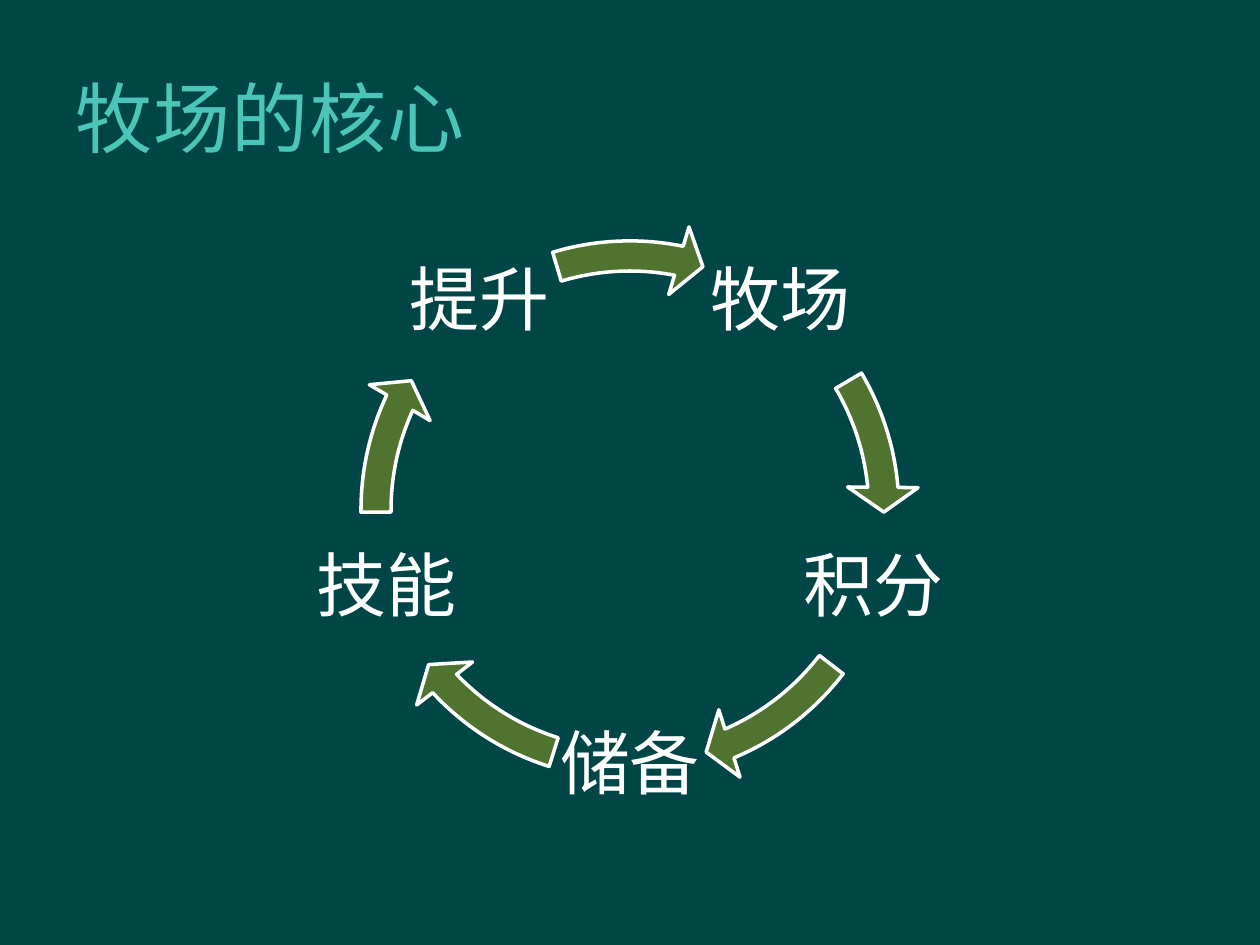
from dataclasses import dataclass
from math import cos, radians, sin

from pptx import Presentation
from pptx.dml.color import RGBColor
from pptx.enum.shapes import MSO_SHAPE
from pptx.enum.text import MSO_ANCHOR, MSO_AUTO_SIZE, PP_ALIGN
from pptx.util import Cm, Pt


@dataclass(frozen=True)
class Theme:
    back: RGBColor = RGBColor.from_string("004646")
    head: RGBColor = RGBColor.from_string("4BC5B9")
    text: RGBColor = RGBColor.from_string("FFFFFF")
    arrow: RGBColor = RGBColor.from_string("50742F")
    head_font: str = "Arial"
    text_font: str = "Times New Roman"
    head_size: Pt = Pt(44)
    text_size: Pt = Pt(40)
    line: Pt = Pt(2)


THEME = Theme()
MID_X, MID_Y = 12.7, 10.28
RADIUS = 5.17
LABEL = 3.1
RING = 11.66
STEPS = [
    ("牧场", 329.43, 354.9),
    ("积分", 37.55, 66.93),
    ("储备", 107.48, 136.86),
    ("技能", 179.5, 204.98),
    ("提升", 253.3, 281.11),
]


def add_run(para, text, font, size, color):
    run = para.add_run()
    run.text = text
    run.font.name = font
    run.font.size = size
    run.font.color.rgb = color
    return run


def square(x, y, side):
    return Cm(x - side / 2), Cm(y - side / 2), Cm(side), Cm(side)


def add_title(slide, text):
    title = slide.shapes.title
    title.left, title.top = Cm(1.27), Cm(0.76)
    title.width, title.height = Cm(21.59), Cm(3.18)
    frame = title.text_frame
    frame.auto_size = MSO_AUTO_SIZE.NONE
    frame.vertical_anchor = MSO_ANCHOR.MIDDLE
    para = frame.paragraphs[0]
    para.alignment = PP_ALIGN.LEFT
    run = add_run(para, text, THEME.head_font, THEME.head_size, THEME.head)
    run.font._element.set("spc", "50")


def add_label(slide, text, angle):
    x = MID_X + RADIUS * cos(radians(angle))
    y = MID_Y + RADIUS * sin(radians(angle))
    frame = slide.shapes.add_textbox(*square(x, y, LABEL)).text_frame
    frame.word_wrap = True
    frame.vertical_anchor = MSO_ANCHOR.MIDDLE
    frame.margin_left = frame.margin_right = Cm(0.08)
    frame.margin_top = frame.margin_bottom = Cm(0.15)
    para = frame.paragraphs[0]
    para.alignment = PP_ALIGN.CENTER
    para.line_spacing = 0.9
    para.space_after = Pt(14)
    add_run(para, text, THEME.text_font, THEME.text_size, THEME.text)


def add_arrow(slide, start, end):
    arrow = slide.shapes.add_shape(
        MSO_SHAPE.CIRCULAR_ARROW, *square(MID_X, MID_Y, RING))
    arrow.shadow.inherit = False
    arrow.fill.solid()
    arrow.fill.fore_color.rgb = THEME.arrow
    arrow.line.color.rgb = THEME.text
    arrow.line.width = THEME.line
    values = (0.052, 5.6 * 0.6, end * 0.6, start * 0.6, 0.061)
    for i, value in enumerate(values):
        arrow.adjustments[i] = value


def main():
    deck = Presentation()
    deck.slide_width, deck.slide_height = Cm(25.4), Cm(19.05)
    slide = deck.slides.add_slide(deck.slide_layouts[5])
    slide.background.fill.solid()
    slide.background.fill.fore_color.rgb = THEME.back
    add_title(slide, "牧场的核心")
    for i, (text, start, end) in enumerate(STEPS):
        add_label(slide, text, -54 + i * 360 / len(STEPS))
        add_arrow(slide, start, end)
    deck.save("out.pptx")


if __name__ == "__main__":
    main()
